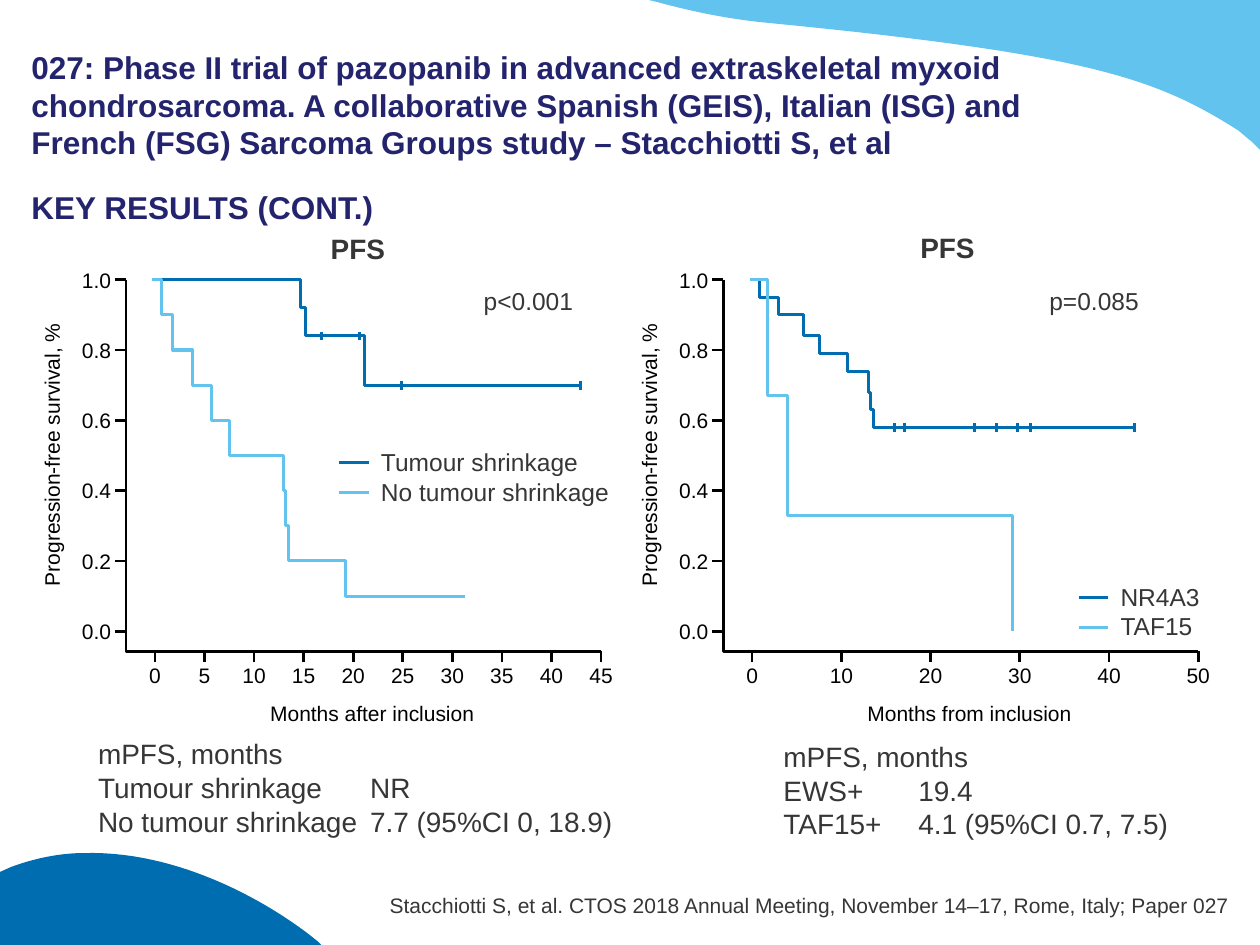
from dataclasses import dataclass

from lxml.etree import SubElement
from pptx import Presentation
from pptx.dml.color import RGBColor as Color
from pptx.enum.shapes import MSO_CONNECTOR as Connector
from pptx.enum.text import MSO_ANCHOR as Anchor, MSO_AUTO_SIZE as AutoSize, PP_ALIGN as Align
from pptx.oxml.ns import qn
from pptx.util import Emu, Inches, Pt


@dataclass(frozen=True)
class Theme:
    font: str = "Arial"
    navy: str = "23246D"
    dark: str = "006DB0"
    light: str = "62C4EE"
    grey: str = "363636"
    black: str = "000000"
    title: int = 18
    summary: int = 16
    legend: int = 14
    label: int = 12
    axis_line: float = 1.5
    curve_line: float = 1.75


THEME = Theme()
WIDTH, HEIGHT = Inches(10), Inches(7.5)
COLUMNS, ROWS = 100, 75
PLOT_TOP, PLOT_ROWS = 22.2, 27.9
AXIS_ROW, AXIS_COLUMNS = 51.7, 37.7
ZERO_OFFSET, TICK = 2.3, 0.85
LEGEND_STEP = 2.4


@dataclass(frozen=True)
class Curve:
    name: str
    color: str
    steps: tuple
    end: float
    censored: tuple = ()


@dataclass(frozen=True)
class Panel:
    left: float
    months: int
    interval: int
    axis_title: str
    p_value: str
    p_left: float
    legend_at: tuple
    legend_width: float
    curves: tuple

    def column(self, month):
        return self.left + ZERO_OFFSET + month * (AXIS_COLUMNS - ZERO_OFFSET) / self.months


PANELS = (
    Panel(10, 45, 5, "Months after inclusion", "p<0.001", 37.4, (26.9, 36.7), 20.2, (
        Curve("Tumour shrinkage", THEME.dark,
              ((14.7, 0.92), (15.2, 0.84), (21.1, 0.7)), 42.9,
              ((16.8, 0.84), (20.6, 0.84), (24.9, 0.7), (42.9, 0.7))),
        Curve("No tumour shrinkage", THEME.light,
              ((0.7, 0.9), (1.8, 0.8), (3.8, 0.7), (5.7, 0.6), (7.5, 0.5),
               (13, 0.4), (13.2, 0.3), (13.5, 0.2), (19.2, 0.1)), 31.3))),
    Panel(57.4, 50, 10, "Months from inclusion", "p=0.085", 82.3, (85.6, 47.4), 8.3, (
        Curve("NR4A3", THEME.dark,
              ((0.8, 0.95), (3, 0.9), (5.8, 0.84), (7.6, 0.79), (10.7, 0.74),
               (13, 0.68), (13.3, 0.63), (13.6, 0.58)), 43,
              tuple((month, 0.58) for month in (16, 17.1, 24.9, 27.4, 29.7, 31.2, 42.9))),
        Curve("TAF15", THEME.light, ((1.7, 0.67), (4, 0.33), (29.2, 0)), 29.2))),
)


def across(columns):
    return Emu(round(WIDTH * columns / COLUMNS))


def down(rows):
    return Emu(round(HEIGHT * rows / ROWS))


def survival_row(share):
    return PLOT_TOP + (1 - share) * PLOT_ROWS


def add_text(shapes, at, lines, size, color, bold=False, align=Align.LEFT,
             anchor=Anchor.TOP, wrap=False, insets=(0.1, 0.05, 0.1, 0.05), tab=None):
    left, top, width, height = at
    box = shapes.add_textbox(across(left), down(top), across(width), down(height))
    frame = box.text_frame
    frame.text = "\n".join(lines)
    frame.word_wrap = wrap
    frame.auto_size = AutoSize.NONE if wrap else AutoSize.SHAPE_TO_FIT_TEXT
    frame.vertical_anchor = anchor
    (frame.margin_left, frame.margin_top,
     frame.margin_right, frame.margin_bottom) = map(Inches, insets)
    for para in frame.paragraphs:
        para.alignment = align
        if tab:
            stops = SubElement(para._p.get_or_add_pPr(), qn("a:tabLst"))
            SubElement(stops, qn("a:tab"), pos=str(across(tab)), algn="l")
        for span in para.runs:
            font = span.font
            font.name, font.size, font.bold = THEME.font, Pt(size), bold
            font.color.rgb = Color.from_string(color)
    return box


def add_line(shapes, start, end, color, weight):
    line = shapes.add_connector(Connector.STRAIGHT, across(start[0]), down(start[1]),
                                across(end[0]), down(end[1]))
    line.line.color.rgb = Color.from_string(color)
    line.line.width = Pt(weight)
    SubElement(line._element.spPr, qn("a:effectLst"))


def add_outline(shapes, points, closed=False):
    corners = [(across(x), down(y)) for x, y in points]
    builder = shapes.build_freeform(*corners[0])
    builder.add_line_segments(corners[1:], close=closed)
    outline = builder.convert_to_shape()
    outline.shadow.inherit = False
    return outline


def add_path(shapes, points, color, weight):
    outline = add_outline(shapes, points)
    outline.fill.background()
    outline.line.color.rgb = Color.from_string(color)
    outline.line.width = Pt(weight)


def add_wave(shapes, points, color):
    outline = add_outline(shapes, points, closed=True)
    outline.fill.solid()
    outline.fill.fore_color.rgb = Color.from_string(color)
    outline.line.fill.background()


def bezier(*controls, count=30):
    def blend(t, values):
        a, b, c, d = values
        return a * (1 - t) ** 3 + 3 * b * t * (1 - t) ** 2 + 3 * c * t * t * (1 - t) + d * t ** 3
    return [tuple(blend(i / count, axis) for axis in zip(*controls)) for i in range(count + 1)]


def add_axes(shapes, panel):
    left, right = panel.left, panel.left + AXIS_COLUMNS
    style = (THEME.black, THEME.axis_line)
    text = (THEME.label, THEME.black)
    add_path(shapes, [(left, PLOT_TOP), (left, AXIS_ROW), (right, AXIS_ROW)], *style)
    for fifth in range(6):
        row = survival_row(fifth / 5)
        add_line(shapes, (left - TICK, row), (left, row), *style)
        add_text(shapes, (left - 4.6, row - 1.5, 4.4, 3), [f"{fifth / 5:.1f}"], *text,
                 align=Align.RIGHT, anchor=Anchor.MIDDLE)
    for month in range(0, panel.months + 1, panel.interval):
        column, label = panel.column(month), str(month)
        width = 1.9 + len(label)
        add_line(shapes, (column, AXIS_ROW), (column, AXIS_ROW + TICK), *style)
        add_text(shapes, (column - width / 2, 52.1, width, 3), [label], *text, align=Align.CENTER)
    add_text(shapes, (left + 10.4, 55.1, 18.3, 3), [panel.axis_title], *text, align=Align.CENTER)
    title = add_text(shapes, (left - 17.4, 34.6, 23, 3), ["Progression-free survival, %"],
                     *text, align=Align.CENTER)
    title.rotation = 270


def add_curve(shapes, panel, curve):
    style = (curve.color, THEME.curve_line)
    row = survival_row(1)
    points = [(panel.column(-0.25), row)]
    for month, share in curve.steps:
        column = panel.column(month)
        points += [(column, row), (column, survival_row(share))]
        row = survival_row(share)
    if curve.end > curve.steps[-1][0]:
        points.append((panel.column(curve.end), row))
    add_path(shapes, points, *style)
    for month, share in curve.censored:
        column, row = panel.column(month), survival_row(share)
        add_line(shapes, (column, row - 0.35), (column, row + 0.35), *style)


def add_panel(slide, panel):
    shapes = slide.shapes.add_group_shape().shapes
    text = (THEME.legend, THEME.grey)
    add_axes(shapes, panel)
    add_text(shapes, (panel.p_left, 22.2, 9.1, 3.4), [panel.p_value], *text)
    left, top = panel.legend_at
    add_text(shapes, (left + 2.35, top - 1.7, panel.legend_width, 5.7),
             [curve.name for curve in panel.curves], *text)
    for index, curve in enumerate(panel.curves):
        row = top + index * LEGEND_STEP
        add_line(shapes, (left, row), (left + 2.35, row), curve.color, THEME.curve_line)
        add_curve(shapes, panel, curve)


def add_background(shapes):
    add_wave(shapes, [(51.5, 0), (100, 0), (100, 11.9), (99.3, 11.2),
                      *bezier((99.3, 11.2), (98.9, 10.9), (98.6, 10.6), (98.2, 10.3)),
                      *bezier((98.2, 10.3), (91.7, 6.2), (86.4, 4.3), (60.8, 1.8)),
                      *bezier((60.8, 1.8), (57.7, 1.5), (54.9, 0.9), (52.3, 0.2))], THEME.light)
    add_wave(shapes, [*bezier((6.7, 67.7), (14.5, 67.5), (21.8, 71.9), (25.2, 74.7)),
                      (25.5, 75), (0, 75), (0, 69.2),
                      *bezier((0.9, 68.8), (2.8, 68.1), (4.8, 67.7), (6.7, 67.7))], THEME.dark)


def add_headings(shapes):
    style = (THEME.title, THEME.navy, True)
    add_text(shapes, (2.5, 2.5, 84, 10.3),
             ["027: Phase II trial of pazopanib in advanced extraskeletal myxoid chondrosarcoma. "
              "A collaborative Spanish (GEIS), Italian (ISG) and French (FSG) Sarcoma Groups "
              "study – Stacchiotti S, et al"],
             *style, anchor=Anchor.BOTTOM, wrap=True, insets=(0, 0.05, 0, 0))
    add_text(shapes, (2.5, 14.4, 95, 58.1), ["KEY RESULTS (CONT.)"], *style,
             wrap=True, insets=(0, 0.05, 0, 0.05))
    for left, top in ((25.2, 17.9), (72, 17.8)):
        add_text(shapes, (left, top, 6.4, 3.7), ["PFS"], THEME.summary, THEME.grey, True,
                 align=Align.CENTER)


def add_summaries(shapes):
    style = (THEME.summary, THEME.grey)
    add_text(shapes, (6.8, 58, 43.4, 9.1),
             ["mPFS, months", "Tumour shrinkage\tNR", "No tumour shrinkage\t7.7 (95%CI 0, 18.9)"],
             *style, tab=21.6)
    add_text(shapes, (61.2, 58.2, 33, 9.1),
             ["mPFS, months", "EWS+\t19.4", "TAF15+\t4.1 (95%CI 0.7, 7.5)"], *style, tab=10.7)
    add_text(shapes, (30.4, 70.8, 67.2, 2),
             ["Stacchiotti S, et al. CTOS 2018 Annual Meeting, November 14–17, Rome, Italy; Paper 027"],
             THEME.label, THEME.grey, align=Align.RIGHT, anchor=Anchor.BOTTOM, insets=(0, 0, 0, 0))


def main():
    deck = Presentation()
    deck.slide_width, deck.slide_height = WIDTH, HEIGHT
    page = deck.slides.add_slide(deck.slide_layouts[6])
    add_background(page.shapes)
    add_headings(page.shapes)
    add_summaries(page.shapes)
    for panel in PANELS:
        add_panel(page, panel)
    deck.save("out.pptx")


if __name__ == "__main__":
    main()
